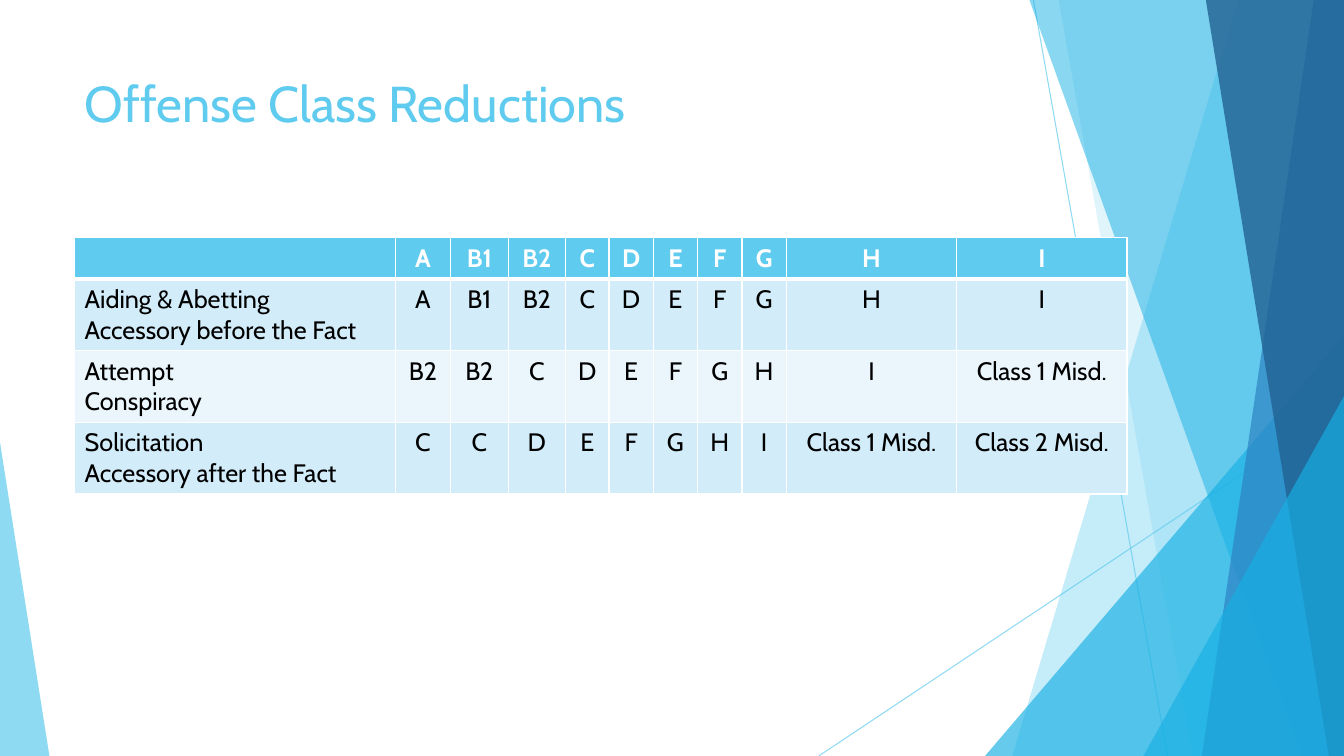
import pptx
import pptx.util
import pptx.dml.color
import pptx.enum.shapes
import pptx.enum.text
import pptx.oxml
import pptx.oxml.ns
from pptx.util import Inches

WIDE, HIGH = 13.33, 7.5
SKY, AQUA, BLUE, NAVY = "5FCBEF", "17B0E4", "2E83C3", "226292"
WHITE, BLACK = "FFFFFF", "000000"
PALE, MIST = "D2ECF9", "EAF6FC"
ALIGN = pptx.enum.text.PP_ALIGN


def color(code):
    return pptx.dml.color.RGBColor.from_string(code)


def write(frame, text, size=18, ink=BLACK, bold=False, align=ALIGN.LEFT, font="Cabin"):
    frame.word_wrap = True
    for num, line in enumerate(text.split("\n")):
        para = frame.paragraphs[0] if num == 0 else frame.add_paragraph()
        para.alignment = align
        run = para.add_run()
        run.text = line
        run.font.name = font
        run.font.size = pptx.util.Pt(size)
        run.font.bold = bold
        run.font.color.rgb = color(ink)


def fade(part, alpha):
    """Set the opacity, in percent, of the solid colour inside part."""
    tone = part.find(".//" + pptx.oxml.ns.qn("a:srgbClr"))
    pptx.oxml.ns.qn("a:alpha")
    node = tone.makeelement(pptx.oxml.ns.qn("a:alpha"), {"val": str(alpha * 1000)})
    tone.append(node)


class Page:
    def __init__(self, deck):
        self.slide = deck.slides.add_slide(deck.slide_layouts[5])
        self.shapes = self.slide.shapes

    def line(self, start, end):
        rule = self.shapes.add_connector(
            pptx.enum.shapes.MSO_CONNECTOR.STRAIGHT,
            *[Inches(n) for n in (*start, *end)])
        rule.line.width = pptx.util.Pt(0.75)
        rule.line.color.rgb = color(SKY)
        props = rule._element.spPr
        fade(props, 70)
        props.append(props.makeelement(pptx.oxml.ns.qn("a:effectLst"), {}))

    def paint(self, shape, fill, alpha):
        shape.shadow.inherit = False
        shape.line.fill.background()
        shape.fill.solid()
        shape.fill.fore_color.rgb = color(fill)
        fade(shape._element.spPr, alpha)

    def band(self, top, foot, fill, alpha):
        """Full-height band from a slanted left edge to the slide's right edge."""
        path = self.shapes.build_freeform(Inches(top), 0)
        path.add_line_segments([(Inches(x), Inches(y)) for x, y in
                                ((WIDE, 0), (WIDE, HIGH), (foot, HIGH))])
        self.paint(path.convert_to_shape(), fill, alpha)

    def wedge(self, left, top, width, peak, fill, alpha):
        """Triangle that stands on the slide's bottom edge."""
        shape = self.shapes.add_shape(
            pptx.enum.shapes.MSO_SHAPE.ISOSCELES_TRIANGLE,
            Inches(left), Inches(top), Inches(width), Inches(HIGH - top))
        shape.adjustments[0] = peak
        self.paint(shape, fill, alpha)

    def title(self, text, left, top, width, height):
        head = self.shapes.title
        head.left, head.top = Inches(left), Inches(top)
        head.width, head.height = Inches(width), Inches(height)
        head.text_frame.vertical_anchor = pptx.enum.text.MSO_ANCHOR.TOP
        write(head.text_frame, text, size=36, ink=SKY)

    def edge(self, cell, side, points):
        props = cell._tc.get_or_add_tcPr()
        space = pptx.oxml.ns.nsdecls("a")
        props.append(pptx.oxml.parse_xml(
            f'<a:ln{side} {space} w="{points * 12700}"><a:solidFill>'
            f'<a:srgbClr val="{WHITE}"/></a:solidFill></a:ln{side}>'))

    def table(self, rows, left, top, widths, heights):
        frame = self.shapes.add_table(
            len(rows), len(widths), Inches(left), Inches(top),
            Inches(sum(widths)), Inches(sum(heights)))
        grid = frame.table
        for col, width in zip(grid.columns, widths):
            col.width = Inches(width)
        for row, height in zip(grid.rows, heights):
            row.height = Inches(height)
        for r, row in enumerate(rows):
            for c, text in enumerate(row):
                cell = grid.cell(r, c)
                for side in "LRTB":
                    thick = (r, side) in ((0, "B"), (1, "T"))
                    self.edge(cell, side, 3 if thick else 1)
                cell.fill.solid()
                shade = SKY if r == 0 else (MIST, PALE)[r % 2]
                cell.fill.fore_color.rgb = color(shade)
                write(cell.text_frame, text, bold=r == 0,
                      ink=BLACK if r else WHITE,
                      align=ALIGN.CENTER if c else ALIGN.LEFT)


def main():
    deck = pptx.Presentation()
    deck.slide_width, deck.slide_height = Inches(WIDE), Inches(HIGH)
    page = Page(deck)

    # Backdrop: thin lines, slanted bands and corner wedges
    page.line((10.25, 0), (11.58, HIGH))
    page.line((WIDE, 4.03), (8.12, HIGH))
    page.band(12.28, 10.04, SKY, 36)
    page.band(10.5, 11.83, SKY, 20)
    page.wedge(9.77, 3.33, 3.56, 1, AQUA, 66)
    page.band(10.21, 12.91, AQUA, 50)
    page.band(13.03, 11.92, BLUE, 70)
    page.band(11.96, 13.18, NAVY, 80)
    page.wedge(11.34, 3.93, 1.99, 1, AQUA, 66)
    page.wedge(0, 4.39, 0.49, 0, SKY, 70)

    # Title
    page.title("Offense Class Reductions", 0.74, 0.67, 9.4, 1.44)

    # Table: each step down shifts the offense classes
    ranks = ["A", "B1", "B2", "C", "D", "E", "F", "G", "H", "I"]
    first, second = "Class 1 Misd.", "Class 2 Misd."
    rows = [
        ["", *ranks],
        ["Aiding & Abetting\nAccessory before the Fact", *ranks],
        ["Attempt\nConspiracy", "B2", *ranks[2:], first],
        ["Solicitation\nAccessory after the Fact", "C", *ranks[3:], first, second],
    ]
    # Classes A and B1 both drop to the same class
    rows[3][1:] = ["C", "C", *ranks[4:], first, second]
    widths = [3.18, 0.55, 0.57, 0.57, 0.43] + [0.44] * 4 + [1.69] * 2
    page.table(rows, 0.74, 2.36, widths, [0.41] + [0.7] * 3)

    deck.save("out.pptx")


if __name__ == "__main__":
    main()
